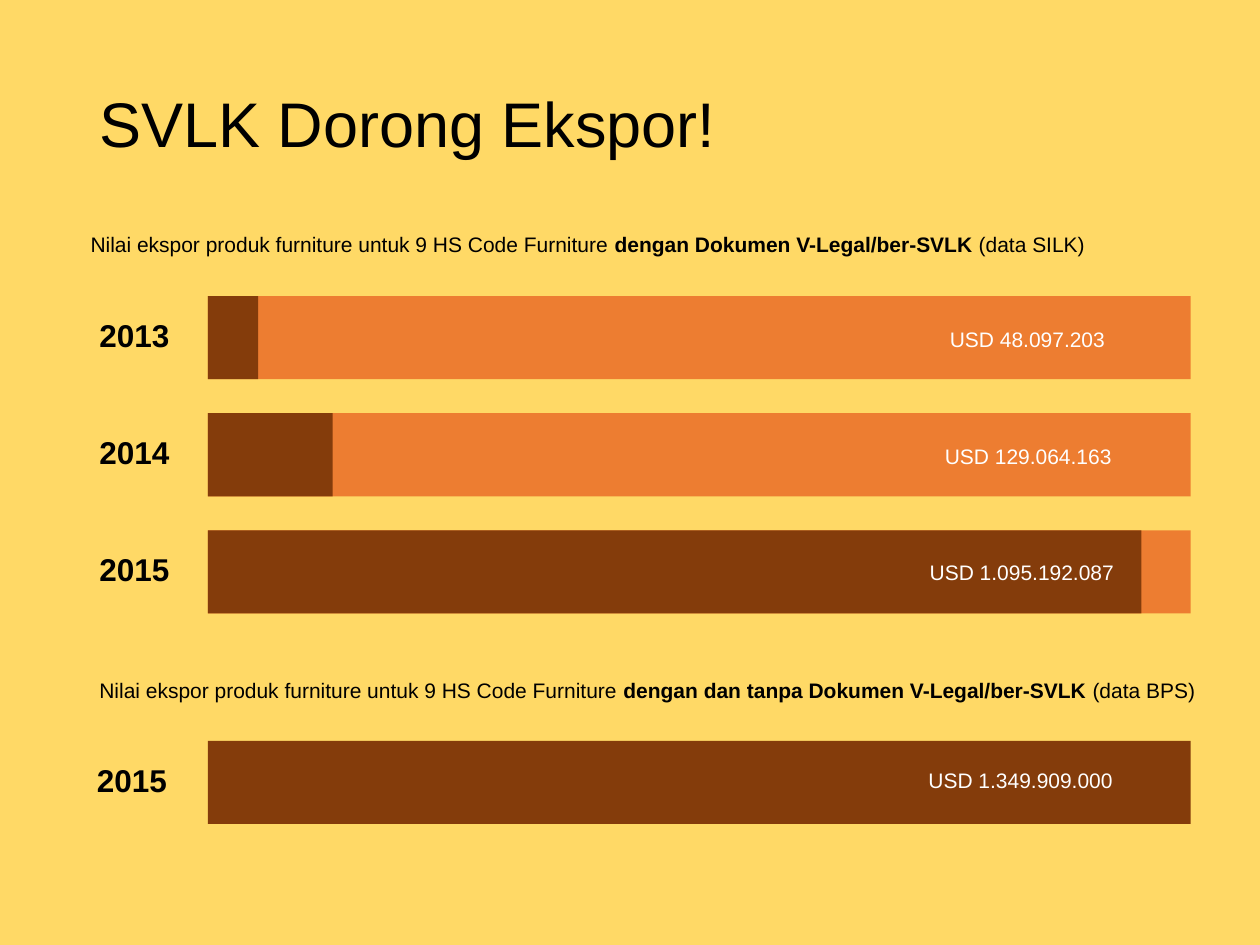
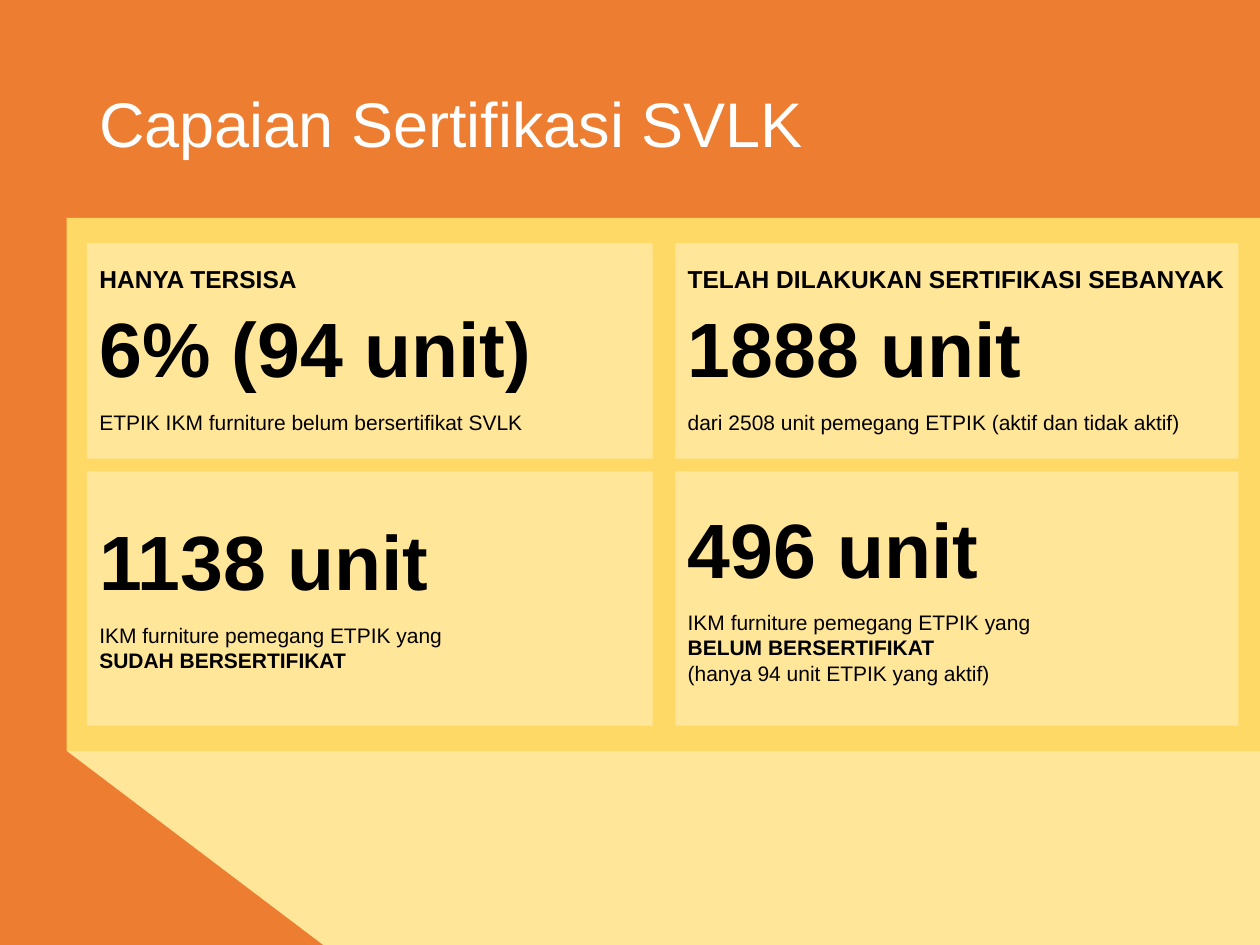
from dataclasses import dataclass
from typing import NamedTuple

from pptx import Presentation
from pptx.dml.color import RGBColor
from pptx.enum.shapes import MSO_SHAPE as Shape
from pptx.enum.text import MSO_ANCHOR as Anchor, PP_ALIGN as Align
from pptx.util import Inches, Pt


# Shared look
@dataclass(frozen=True)
class Theme:
    font: str = "Arial"
    yellow: str = "FFD966"
    cream: str = "FFE699"
    orange: str = "ED7D31"
    brown: str = "843C0B"
    black: str = "000000"
    white: str = "FFFFFF"
    title: int = 36
    figure: int = 44
    year: int = 18
    heading: int = 14
    body: int = 12


T = Theme()


class Box(NamedTuple):
    left: float
    top: float
    width: float
    height: float

    def emu(self) -> list:
        return [Inches(v) for v in self]


class Run(NamedTuple):
    text: str
    bold: bool = False


@dataclass(frozen=True)
class Bar:
    year: str
    amount: str
    top: float
    filled: float
    amount_left: float
    amount_drop: float = 0.19
    year_left: float = 0.69


class Line(NamedTuple):
    text: str
    size: int = T.body
    bold: bool = False
    spacing: float = 0.9
    before: int = 10


@dataclass(frozen=True)
class Card:
    col: int
    row: int
    lines: tuple


# Drawing helpers
def add_text(tf, runs, *, size: int, color: str = T.black, first: bool = True,
             spacing: float = 1.0, before: int = 0) -> None:
    """Write one paragraph of runs into a text frame."""
    p = tf.paragraphs[0] if first else tf.add_paragraph()
    p.alignment = Align.LEFT
    p.line_spacing = spacing
    p.space_before = Pt(before)
    for run in runs:
        r = p.add_run()
        r.text = run.text
        r.font.name = T.font
        r.font.size = Pt(size)
        r.font.bold = run.bold
        r.font.color.rgb = RGBColor.from_string(color)


def add_label(s, box: Box, *runs: Run, anchor=Anchor.TOP, **fmt) -> None:
    tf = s.shapes.add_textbox(*box.emu()).text_frame
    tf.word_wrap = True
    tf.vertical_anchor = anchor
    add_text(tf, runs, **fmt)


def paint(sp, color: str):
    sp.shadow.inherit = False
    sp.fill.solid()
    sp.fill.fore_color.rgb = RGBColor.from_string(color)
    sp.line.fill.background()
    return sp


def add_rect(s, box: Box, color: str):
    return paint(s.shapes.add_shape(Shape.RECTANGLE, *box.emu()), color)


def new_slide(prs, background: str):
    s = prs.slides.add_slide(prs.slide_layouts[6])
    s.background.fill.solid()
    s.background.fill.fore_color.rgb = RGBColor.from_string(background)
    return s


def add_title(s, text: str, color: str) -> None:
    add_label(s, Box(0.69, 0.28, 8.62, 1.45), Run(text), anchor=Anchor.MIDDLE,
              size=T.title, color=color, spacing=0.9)


# Export values
BAR_LEFT, BAR_WIDTH, BAR_HEIGHT = 1.65, 7.8, 0.66
FIRST_BAR, BAR_PITCH = 2.35, 0.93

BARS = (
    Bar("2013", "USD 48.097.203", FIRST_BAR, 0.4, 7.44),
    Bar("2014", "USD 129.064.163", FIRST_BAR + BAR_PITCH, 0.99, 7.4),
    Bar("2015", "USD 1.095.192.087", FIRST_BAR + 2 * BAR_PITCH, 7.41, 7.28, 0.18),
    Bar("2015", "USD 1.349.909.000", 5.88, BAR_WIDTH, 7.27, 0.16, 0.67),
)


def add_bar(s, bar: Bar) -> None:
    if bar.filled < BAR_WIDTH:
        add_rect(s, Box(BAR_LEFT, bar.top, BAR_WIDTH, BAR_HEIGHT), T.orange)
    add_rect(s, Box(BAR_LEFT, bar.top, bar.filled, BAR_HEIGHT), T.brown)
    add_label(s, Box(bar.year_left, bar.top + 0.11, 0.97, 0.46),
              Run(bar.year, True), size=T.year)
    add_label(s, Box(bar.amount_left, bar.top + bar.amount_drop, 1.72, 0.44),
              Run(bar.amount), size=T.body, color=T.white)


def add_caption(s, left: float, top: float, documents: str, source: str) -> None:
    add_label(s, Box(left, top, 8.91, 0.56),
              Run("Nilai ekspor produk furniture untuk 9 HS Code Furniture "),
              Run(documents, True), Run(source), size=T.body)


def export_slide(prs) -> None:
    s = new_slide(prs, T.yellow)
    add_title(s, "SVLK Dorong Ekspor!", T.black)
    add_caption(s, 0.62, 1.79, "dengan Dokumen V-Legal/ber-SVLK ", "(data SILK)")
    add_caption(s, 0.69, 5.33, "dengan dan tanpa Dokumen V-Legal/ber-SVLK ",
                "(data BPS)")
    for bar in BARS:
        add_bar(s, bar)


# Certification results
COLUMNS = ((0.69, 4.49), (5.36, 4.47))
ROWS = ((1.93, 1.71), (3.74, 2.02))
RAY = ((0.53, 5.96), (7.6, 1.83), (10.26, 3.09), (10.28, 8.05), (3.24, 8.01))


def heading(text: str) -> Line:
    return Line(text, T.heading, True)


def figure(text: str) -> Line:
    return Line(text, T.figure, True)


def follow_on(text: str, bold: bool = False) -> Line:
    return Line(text, bold=bold, spacing=1.0, before=0)


CARDS = (
    Card(0, 0, (heading("HANYA TERSISA"), figure("6% (94 unit)"),
                Line("ETPIK IKM furniture belum bersertifikat SVLK"))),
    Card(0, 1, (figure("1138 unit"), Line("IKM furniture pemegang ETPIK yang"),
                follow_on("SUDAH BERSERTIFIKAT", True))),
    Card(1, 0, (heading("TELAH DILAKUKAN SERTIFIKASI SEBANYAK"), figure("1888 unit"),
                Line("dari 2508 unit pemegang ETPIK (aktif dan tidak aktif)"))),
    Card(1, 1, (figure("496 unit"), Line("IKM furniture pemegang ETPIK yang"),
                follow_on("BELUM BERSERTIFIKAT", True),
                follow_on("(hanya 94 unit ETPIK yang aktif)"))),
)


def add_card(s, card: Card) -> None:
    (left, width), (top, height) = COLUMNS[card.col], ROWS[card.row]
    tf = add_rect(s, Box(left, top, width, height), T.cream).text_frame
    tf.word_wrap = True
    tf.vertical_anchor = Anchor.MIDDLE
    for i, line in enumerate(card.lines):
        add_text(tf, [Run(line.text, line.bold)], size=line.size, first=i == 0,
                 spacing=line.spacing, before=line.before)


def certification_slide(prs) -> None:
    s = new_slide(prs, T.orange)
    start, *rest = [(Inches(x), Inches(y)) for x, y in RAY]
    ray = s.shapes.build_freeform(*start)
    ray.add_line_segments(rest, close=True)
    paint(ray.convert_to_shape(), T.cream)
    add_title(s, "Capaian Sertifikasi SVLK", T.white)
    add_rect(s, Box(0.53, 1.73, 9.64, 4.23), T.yellow)
    for card in CARDS:
        add_card(s, card)


def main() -> None:
    prs = Presentation()
    prs.slide_width, prs.slide_height = Inches(10), Inches(7.5)
    export_slide(prs)
    certification_slide(prs)
    prs.save("out.pptx")


if __name__ == "__main__":
    main()
